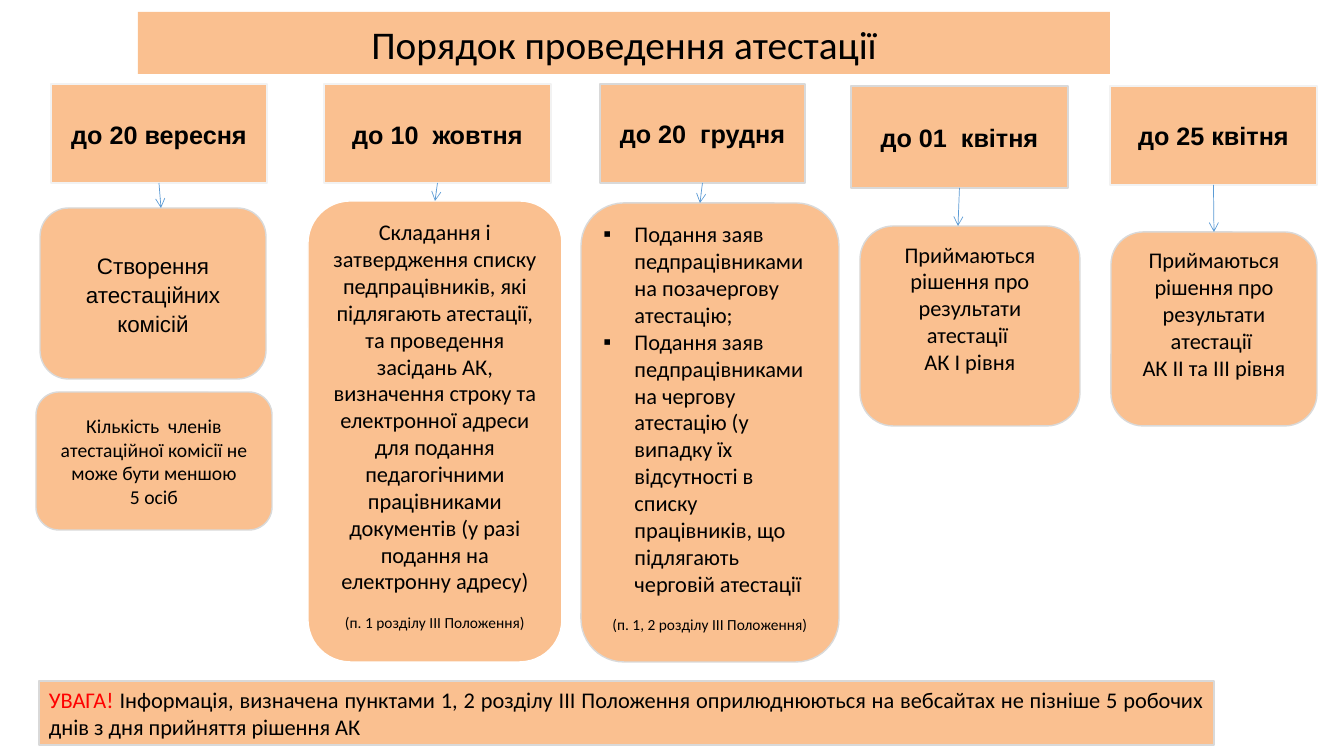
from lxml import etree
from pptx import Presentation
from pptx import util as u
from pptx.dml.color import RGBColor
from pptx.enum import shapes, text
from pptx.oxml.ns import qn

PEACH = RGBColor(0xFA, 0xC0, 0x90)
BLACK = RGBColor(0, 0, 0)
RED = RGBColor(0xFF, 0, 0)
WHITE = RGBColor(0xFF, 0xFF, 0xFF)
PALE = RGBColor(0xF2, 0xF2, 0xF2)
GREY = RGBColor(0xD9, 0xD9, 0xD9)
BLUE = RGBColor(0x5B, 0x9B, 0xD5)

CENTER, LEFT, JUSTIFY = (text.PP_ALIGN.CENTER, text.PP_ALIGN.LEFT,
                         text.PP_ALIGN.JUSTIFY)
TOP, MIDDLE = text.MSO_ANCHOR.TOP, text.MSO_ANCHOR.MIDDLE
RECT = shapes.MSO_SHAPE.RECTANGLE
ROUNDED = shapes.MSO_SHAPE.ROUNDED_RECTANGLE
LOOSE = dict(spacing=1.07, after=8)

# Content: boxes are (left, top, width, height) in px
TITLE = dict(box=(138, 12, 972, 62), line=None, size=28,
             lines=["Порядок проведення атестації"], **LOOSE)

# Each stage: deadline, task, x of the arrow tip
STAGES = [
    (dict(box=(51, 84, 216, 99), line=PALE, lines=["до 20 вересня"], **LOOSE),
     dict(box=(40, 208, 226, 171), font="Arial", anchor=MIDDLE,
          lines=["Створення атестаційних комісій"], **LOOSE), 161),
    (dict(box=(324, 84, 227, 99), line=PALE, lines=["до 10  жовтня"], **LOOSE),
     dict(box=(308, 201, 254, 461), line=WHITE, lines=[
         "Складання і затвердження списку педпрацівників, які підлягають "
         "атестації, та проведення засідань АК, визначення строку та "
         "електронної адреси для подання педагогічними працівниками "
         "документів (у разі подання на електронну адресу)"],
         note="(п. 1 розділу ІІІ Положення)"), 435),
    (dict(box=(600, 84, 205, 99), lines=["до 20  грудня"]),
     dict(box=(581, 203, 258, 459), bullet="▪", lines=[
         "Подання заяв педпрацівниками на позачергову атестацію;",
         "Подання заяв педпрацівниками на чергову атестацію (у випадку їх "
         "відсутності в списку працівників, що підлягають черговій атестації"],
         note="(п. 1, 2 розділу ІІІ Положення)"), 700),
    (dict(box=(851, 86, 217, 102), lines=["до 01  квітня"]),
     dict(box=(860, 226, 220, 200), lines=[
         "Приймаються рішення про результати атестації ", "АК І рівня"]), 958),
    (dict(box=(1110, 86, 207, 99), line=PALE, lines=["до 25 квітня"]),
     dict(box=(1111, 232, 206, 194), lines=[
         "Приймаються рішення про результати атестації ",
         "АК ІІ та ІІІ рівня"]), 1214),
]

QUORUM = dict(box=(36, 392, 236, 138), size=14, anchor=MIDDLE, lines=[
    "Кількість  членів атестаційної комісії не може бути меншою", "5 осіб"])

WARNING = dict(box=(39, 681, 1175, 64), align=JUSTIFY, lead="УВАГА! ", lines=[
    "Інформація, визначена пунктами 1, 2 розділу ІІІ Положення оприлюднюються "
    "на вебсайтах не пізніше 5 робочих днів з дня прийняття рішення АК "])

SLIDE_W, SLIDE_H = 1344, 756
BULLET_INDENT = 31
NOTE_GAP = 13


def px(n):
    return u.Emu(round(n * 914400 / 100.8))


prs = Presentation()
prs.slide_width, prs.slide_height = px(SLIDE_W), px(SLIDE_H)
slide = prs.slides.add_slide(prs.slide_layouts[6])


def add_run(paragraph, words, size, font, colour=BLACK, bold=False):
    run = paragraph.add_run()
    run.text = words
    run.font.size = u.Pt(size)
    run.font.name = font
    run.font.bold = bold
    run.font.color.rgb = colour


def add_bullet(paragraph, mark):
    props = paragraph._p.get_or_add_pPr()
    props.set("marL", str(px(BULLET_INDENT)))
    props.set("indent", str(-px(BULLET_INDENT)))
    etree.SubElement(props, qn("a:buFont")).set("typeface", "Arial")
    etree.SubElement(props, qn("a:buChar")).set("char", mark)


def add_panel(kind, box, lines, line=GREY, size=16, font="Calibri", bold=False,
              anchor=TOP, align=CENTER, spacing=None, after=0, bullet=None,
              note=None, lead=None):
    panel = slide.shapes.add_shape(kind, *map(px, box))
    panel.shadow.inherit = False
    panel.fill.solid()
    panel.fill.fore_color.rgb = PEACH
    if line is None:
        panel.line.fill.background()
    else:
        panel.line.color.rgb = line
        panel.line.width = u.Pt(1)
    frame = panel.text_frame
    frame.word_wrap = True
    frame.vertical_anchor = anchor
    for i, words in enumerate(lines):
        paragraph = frame.add_paragraph() if i else frame.paragraphs[0]
        paragraph.alignment = LEFT if bullet else align
        if spacing:
            paragraph.line_spacing = spacing
        paragraph.space_after = u.Pt(after)
        if bullet:
            add_bullet(paragraph, bullet)
        if lead:
            add_run(paragraph, lead, size, font, RED)
        add_run(paragraph, words, size, font, bold=bold)
    if note:
        reference = frame.add_paragraph()
        reference.alignment = CENTER
        reference.space_before = u.Pt(NOTE_GAP)
        add_run(reference, note, 11, font)


def add_arrow(start, tip):
    arrow = slide.shapes.add_connector(shapes.MSO_CONNECTOR.STRAIGHT,
                                       *map(px, start + tip))
    arrow.line.color.rgb = BLUE
    arrow.line.width = u.Pt(0.5)
    etree.SubElement(arrow.line._get_or_add_ln(),
                     qn("a:tailEnd")).set("type", "arrow")
    etree.SubElement(arrow._element.spPr, qn("a:effectLst"))


# Title
add_panel(RECT, **TITLE)

# Deadlines, their tasks and the arrows between them
for deadline, task, tip_x in STAGES:
    add_panel(RECT, size=18, font="Arial", bold=True, anchor=MIDDLE, **deadline)
    add_panel(ROUNDED, **task)
    left, top, width, height = deadline["box"]
    add_arrow((left + width / 2, top + height), (tip_x, task["box"][1]))

# Commission size and the closing warning
add_panel(ROUNDED, **QUORUM)
add_panel(RECT, **WARNING)

prs.save("out.pptx")
